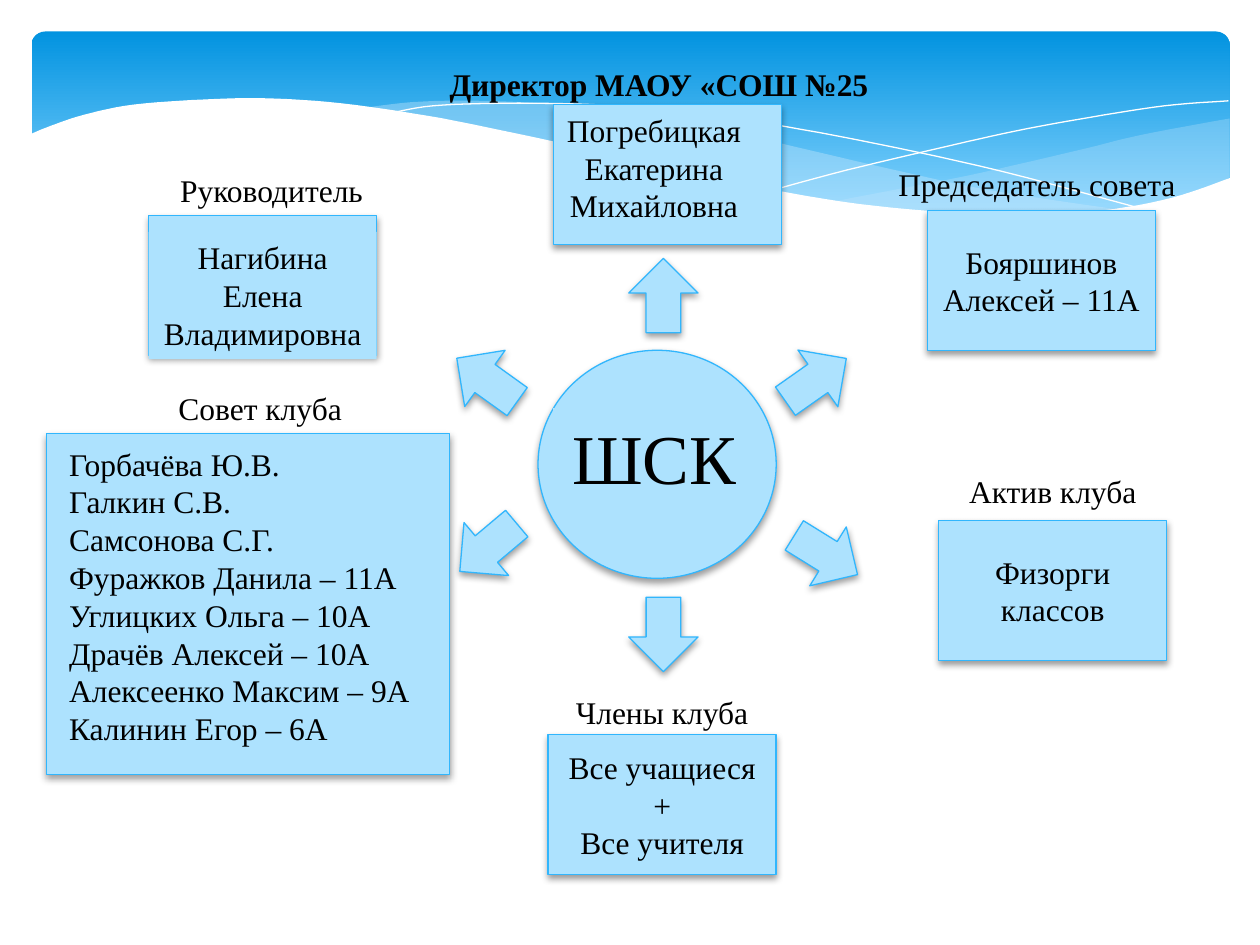
"""Build the school sports club structure slide on a grid of 1000 columns by 750 rows."""
import pptx
import pptx.dml.color
import pptx.enum.shapes
import pptx.enum.text
import pptx.oxml
import pptx.oxml.ns
import pptx.util

RGBColor = pptx.dml.color.RGBColor
SHAPE = pptx.enum.shapes.MSO_SHAPE
ALIGN = pptx.enum.text.PP_ALIGN
ANCHOR = pptx.enum.text.MSO_ANCHOR

WHITE = RGBColor(0xFF, 0xFF, 0xFF)
BLACK = RGBColor(0x00, 0x00, 0x00)
BANNER_TOP = RGBColor(0x02, 0x93, 0xE0)
BANNER_BOTTOM = RGBColor(0x83, 0xD3, 0xFE)
WAVE = RGBColor(0xC6, 0xE7, 0xFC)
PANEL = RGBColor(0xAD, 0xE2, 0xFE)
OUTLINE = RGBColor(0x31, 0xB6, 0xFD)

FONT = "Times New Roman"
CELL = pptx.util.Inches(0.01)
CARD = (181, 111)
ARROW = (59, 55)
SHADOW = (
    '<a:effectLst xmlns:a="http://schemas.openxmlformats.org/drawingml/2006/main">'
    '<a:outerShdw blurRad="50800" dist="25400" dir="5400000" rotWithShape="0">'
    '<a:srgbClr val="000000"><a:alpha val="38000"/></a:srgbClr>'
    "</a:outerShdw></a:effectLst>"
)

BACK_WAVE = (
    [(976, 94), (906, 107), (861, 118), (779, 137), (729, 147), (661, 160)],
    [(661, 160), (719, 167), (769, 171), (814, 172), (863, 170),
     (913, 162), (949, 152), (976, 141)],
)
MIDDLE_WAVE = (
    [(893, 167), (837, 159), (775, 149), (706, 134), (629, 116), (569, 102),
     (514, 92), (442, 83), (380, 80), (328, 81), (286, 86)],
    [(286, 86), (342, 94), (404, 106), (449, 116), (530, 135), (601, 150),
     (665, 161), (722, 168), (773, 172), (818, 173), (857, 171), (893, 167)],
)
FRONT_WAVE = (
    [(977, 141), (930, 157), (875, 167), (809, 171), (744, 168), (668, 160),
     (579, 144), (503, 128), (447, 114), (391, 102), (340, 92), (271, 82),
     (211, 78), (161, 79), (106, 83), (67, 91), (40, 100), (23, 107)],
    [(23, 224), (977, 224)],
)
FALLING_LINE = [(309, 90), (344, 84), (401, 82), (469, 83), (533, 88),
                (608, 98), (695, 114), (795, 136), (907, 166)]
RISING_LINE = [(613, 151), (672, 135), (748, 117), (806, 104), (866, 93),
               (924, 84), (975, 80)]

COUNCIL = """Горбачёва Ю.В.
Галкин С.В.
Самсонова С.Г.
Фуражков Данила – 11А
Углицких Ольга – 10А
Драчёв Алексей – 10А
Алексеенко Максим – 9А
Калинин Егор – 6А"""

HEADINGS = [
    ("Руководитель", 84, 131, 263),
    ("Совет клуба", 106, 304, 201),
    ("Председатель совета", 687, 126, 272),
    ("Актив клуба", 736, 370, 199),
    ("Члены клуба", 427, 545, 197),
]
CARDS = [
    ("", 118, 171),
    ("", 439, 83),
    ("Бояршинов Алексей – 11А", 736, 167),
    ("Физорги классов", 745, 413),
    ("Все учащиеся\n+\nВсе учителя", 435, 583),
]
ARROWS = [(497, 207, 270), (497, 476, 90), (618, 274, 324.9),
          (626, 413, 31.8), (357, 274, 215.7), (358, 407, 139.9)]


def smooth(knots, steps=6):
    """Return points of a Catmull-Rom curve through the knots."""
    if len(knots) < 3:
        return knots
    padded = [knots[0], *knots, knots[-1]]
    points = [knots[0]]
    for a, b, c, d in zip(padded, padded[1:], padded[2:], padded[3:]):
        for step in range(1, steps + 1):
            t = step / steps
            points.append(tuple(
                0.5 * (2 * q + (r - p) * t + (2 * p - 5 * q + 4 * r - s) * t ** 2
                       + (3 * q - p - 3 * r + s) * t ** 3)
                for p, q, r, s in zip(a, b, c, d)))
    return points


def add_curve(slide, *edges, fill=None, opacity=100):
    """Draw a filled wave from its edges, or a thin white line if no fill is given."""
    points = [(x * 10, y * 10) for edge in edges for x, y in smooth(edge)]
    builder = slide.shapes.build_freeform(*points[0], scale=CELL / 10)
    builder.add_line_segments(points[1:], close=fill is not None)
    curve = builder.convert_to_shape()
    curve.shadow.inherit = False
    if fill is None:
        curve.fill.background()
        curve.line.color.rgb = WHITE
        curve.line.width = pptx.util.Pt(0)
        return
    curve.line.fill.background()
    curve.fill.solid()
    curve.fill.fore_color.rgb = fill
    if opacity < 100:
        color = curve.fill._xPr.find(".//" + pptx.oxml.ns.qn("a:srgbClr"))
        alpha = pptx.oxml.parse_xml(
            '<a:alpha xmlns:a="http://schemas.openxmlformats.org/drawingml/2006/main"'
            f' val="{opacity * 1000}"/>')
        color.append(alpha)


def write(frame, text, size=18, bold=False, align=ALIGN.CENTER, anchor=ANCHOR.TOP):
    """Fill a text frame with one paragraph per line of text."""
    frame.word_wrap = True
    frame.vertical_anchor = anchor
    frame.text = text
    for paragraph in frame.paragraphs:
        paragraph.alignment = align
        paragraph.font.size = pptx.util.Pt(size)
        paragraph.font.bold = bold
        paragraph.font.name = FONT
        paragraph.font.color.rgb = BLACK


def add_panel(slide, kind, column, row, width, height, raised=True, rotation=0):
    """Add a light blue shape, outlined and shadowed when raised."""
    panel = slide.shapes.add_shape(kind, *(CELL * n for n in (column, row, width, height)))
    panel.rotation = rotation
    panel.fill.solid()
    panel.fill.fore_color.rgb = PANEL
    if raised:
        panel.line.color.rgb = OUTLINE
        panel.line.width = pptx.util.Pt(0.75)
        panel._element.spPr.append(pptx.oxml.parse_xml(SHADOW))
    else:
        panel.line.fill.background()
        panel.shadow.inherit = False
    return panel


def add_label(slide, text, column, row, width, height=40, **style):
    """Add a transparent text box."""
    label = slide.shapes.add_textbox(*(CELL * n for n in (column, row, width, height)))
    write(label.text_frame, text, **style)


def add_banner(slide):
    """Draw the gradient band with its waves and lines."""
    banner = slide.shapes.add_shape(
        SHAPE.ROUNDED_RECTANGLE, *(CELL * n for n in (25, 25, 951, 156)))
    banner.adjustments[0] = 0.07
    banner.shadow.inherit = False
    banner.line.fill.background()
    banner.fill.gradient()
    banner.fill.gradient_angle = 270
    stops = zip(banner.fill.gradient_stops, (0, 0.9), (BANNER_TOP, BANNER_BOTTOM))
    for stop, position, color in stops:
        stop.position = position
        stop.color.rgb = color
    add_curve(slide, *BACK_WAVE, fill=WAVE, opacity=29)
    add_curve(slide, *MIDDLE_WAVE, fill=WAVE, opacity=40)
    add_curve(slide, FALLING_LINE)
    add_curve(slide, RISING_LINE)
    add_curve(slide, *FRONT_WAVE, fill=WHITE)


def main():
    """Compose the slide and save it."""
    deck = pptx.Presentation()
    deck.slide_width, deck.slide_height = CELL * 1000, CELL * 750
    slide = deck.slides.add_slide(deck.slide_layouts[6])
    add_banner(slide)

    add_panel(slide, SHAPE.OVAL, 427, 278, 189, 181)
    club = add_panel(slide, SHAPE.RECTANGLE, 439, 324, 160, 77, raised=False)
    write(club.text_frame, "ШСК", size=40)
    for column, row, rotation in ARROWS:
        add_panel(slide, SHAPE.RIGHT_ARROW, column, row, *ARROW, rotation=rotation)

    for text, column, row in CARDS:
        card = add_panel(slide, SHAPE.RECTANGLE, column, row, *CARD)
        if text:
            write(card.text_frame, text, anchor=ANCHOR.MIDDLE)
    add_panel(slide, SHAPE.RECTANGLE, 37, 344, 320, 271)

    add_label(slide, "Погребицкая Екатерина Михайловна", 439, 83, 160, 101)
    add_label(slide, "Директор МАОУ «СОШ №25", 347, 47, 353, bold=True, align=ALIGN.LEFT)
    leader = add_panel(slide, SHAPE.RECTANGLE, 118, 184, 181, 101, raised=False)
    write(leader.text_frame, "Нагибина Елена Владимировна")
    council = add_panel(slide, SHAPE.RECTANGLE, 45, 348, 302, 252, raised=False)
    write(council.text_frame, COUNCIL, align=ALIGN.LEFT)
    for heading in HEADINGS:
        add_label(slide, *heading)

    deck.save("out.pptx")


if __name__ == "__main__":
    main()
